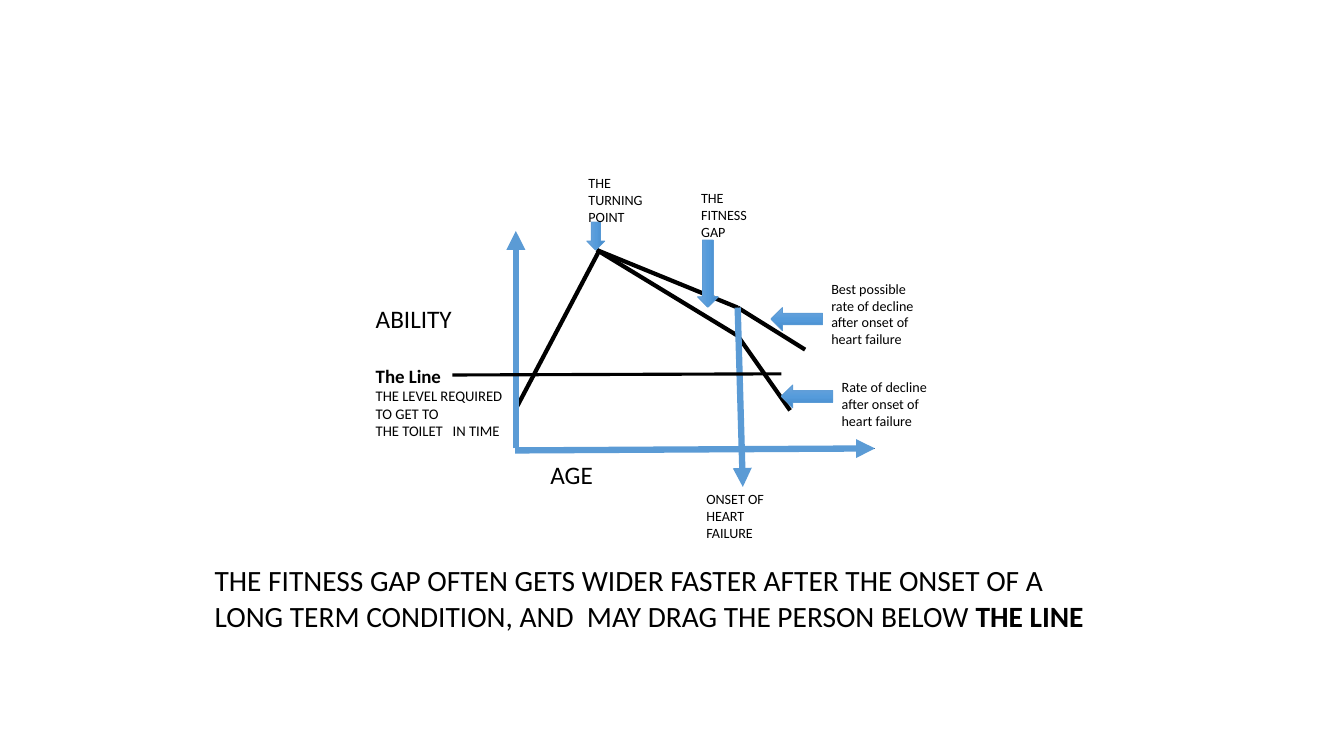
from copy import deepcopy
from dataclasses import dataclass

from pptx import Presentation, util as u
from pptx.dml.color import RGBColor
from pptx.enum import shapes, text
from pptx.oxml import ns, xmlchemy as xc


@dataclass(frozen=True)
class Theme:
    """Colours, font and type sizes of the slide."""
    font: str = "Calibri"
    black: str = "000000"
    blue: str = "5B9BD5"
    shades: tuple = ("71A6DB", "559BDB", "448ACA")
    label: float = 10.1
    detail: float = 10.5
    heading: float = 13.5
    axis: float = 18
    statement: float = 21


T = Theme()
ORIGIN = (13, 11.3)
PEAK = (15.04, 6.3)
BEST_ONSET = (18.59, 7.75)
ACTUAL_ONSET = (18.59, 8.46)


def add_line(s, start, end, color, width, arrow=False):
    """Draw a straight line, with an optional arrowhead at its end."""
    c = s.shapes.add_connector(shapes.MSO_CONNECTOR.STRAIGHT,
                               *(u.Cm(v) for v in (*start, *end)))
    c.line.color.rgb = RGBColor.from_string(color)
    c.line.width = u.Pt(width)
    if arrow:
        head = xc.OxmlElement("a:tailEnd")
        head.set("type", "triangle")
        c.line._get_or_add_ln().append(head)
    c._element.spPr.append(xc.OxmlElement("a:effectLst"))


def add_block_arrow(s, box, rotation=0):
    """Draw a shaded block arrow that points left before rotation."""
    sp = s.shapes.add_shape(shapes.MSO_SHAPE.LEFT_ARROW, *(u.Cm(v) for v in box))
    sp.rotation = rotation
    sp.shadow.inherit = False
    sp.line.color.rgb = RGBColor.from_string(T.blue)
    sp.line.width = u.Pt(0.5)
    sp.fill.gradient()
    sp.fill.gradient_angle = 270
    stops = sp._element.spPr.find(".//" + ns.qn("a:gsLst"))
    stops.insert(1, deepcopy(stops[0]))
    for i, (stop, shade) in enumerate(zip(sp.fill.gradient_stops, T.shades)):
        stop.color.rgb = RGBColor.from_string(shade)
        stop.position = i / 2


def add_text(s, box, lines, size):
    """Add a wrapped text box with one paragraph per line."""
    tf = s.shapes.add_textbox(*(u.Cm(v) for v in box)).text_frame
    tf.word_wrap = True
    tf.auto_size = text.MSO_AUTO_SIZE.SHAPE_TO_FIT_TEXT
    tf.text = "\n".join(lines)
    for p in tf.paragraphs:
        for r in p.runs:
            format_run(r, size)
    return tf


def format_run(r, size, bold=False):
    """Set the font of a run."""
    r.font.name = T.font
    r.font.size = u.Pt(size)
    r.font.bold = bold
    r.font.color.rgb = RGBColor.from_string(T.black)


def add_curves(s):
    """Draw the rise of ability and its two rates of decline."""
    for start, end in (
        (PEAK, BEST_ONSET),
        (BEST_ONSET, (20.29, 8.81)),
        (PEAK, ACTUAL_ONSET),
        (ACTUAL_ONSET, (19.91, 10.34)),
        ((15.11, 6.3), (12.98, 10.34)),
    ):
        add_line(s, start, end, T.black, 3)


def add_axes(s):
    """Draw the axes, the onset marker and the threshold line."""
    add_line(s, ORIGIN, (22.05, 11.3), T.black, 0.75)
    for start, end in (
        (BEST_ONSET, (18.72, 12.27)),
        (ORIGIN, (13, 5.82)),
        ((12.98, 11.35), (22.05, 11.3)),
    ):
        add_line(s, start, end, T.blue, 4.5, arrow=True)
    add_line(s, (11.4, 9.45), (19.69, 9.42), T.black, 2.25)


def add_ability_text(s):
    """Add the ability label and the explanation of the threshold."""
    tf = add_text(s, (9.22, 7.52, 3.94, 3.71),
                  ["ABILITY", "The Line", "THE LEVEL REQUIRED TO GET TO",
                   "THE TOILET   IN TIME"], T.detail)
    ability, heading = tf.paragraphs[:2]
    format_run(ability.runs[0], T.axis)
    format_run(heading.runs[0], T.heading, bold=True)
    heading.space_before = u.Pt(22)


def add_statement(s):
    """Add the closing statement with its bold ending."""
    tf = add_text(s, (5.16, 14.05, 23.27, 2.06),
                  ["THE FITNESS GAP OFTEN GETS WIDER FASTER AFTER THE ONSET OF A "
                   "LONG TERM CONDITION, AND  MAY DRAG THE PERSON BELOW "], T.statement)
    r = tf.paragraphs[0].add_run()
    r.text = "THE LINE"
    format_run(r, T.statement, bold=True)


def main():
    """Build the fitness gap slide."""
    prs = Presentation()
    prs.slide_width, prs.slide_height = u.Cm(33.87), u.Cm(19.05)
    s = prs.slides.add_slide(prs.slide_layouts.get_by_name("Blank"))
    add_curves(s)
    for box, rotation in (
        ((19.43, 7.75, 1.3, 0.58), 0),
        ((19.69, 9.7, 1.3, 0.58), 0),
        ((16.99, 6.63, 1.7, 0.53), 270),
        ((14.66, 5.72, 0.71, 0.46), 270),
    ):
        add_block_arrow(s, box, rotation)
    add_axes(s)
    for box, lines in (
        ((14.58, 4.27, 1.96, 1.55), ["THE", "TURNING", "POINT"]),
        ((17.42, 4.65, 4.06, 1.55), ["THE", "FITNESS", "GAP"]),
        ((20.7, 6.93, 2.69, 1.98),
         ["Best possible rate of decline after onset of heart failure"]),
        ((20.96, 9.42, 2.84, 1.55), ["Rate of decline after onset of heart failure"]),
        ((17.55, 12.24, 2.69, 1.55), ["ONSET OF", "HEART FAILURE"]),
    ):
        add_text(s, box, lines, T.label)
    add_text(s, (13.62, 11.46, 2.2, 0.94), ["AGE"], T.axis)
    add_ability_text(s)
    add_statement(s)
    prs.save("out.pptx")


if __name__ == "__main__":
    main()
